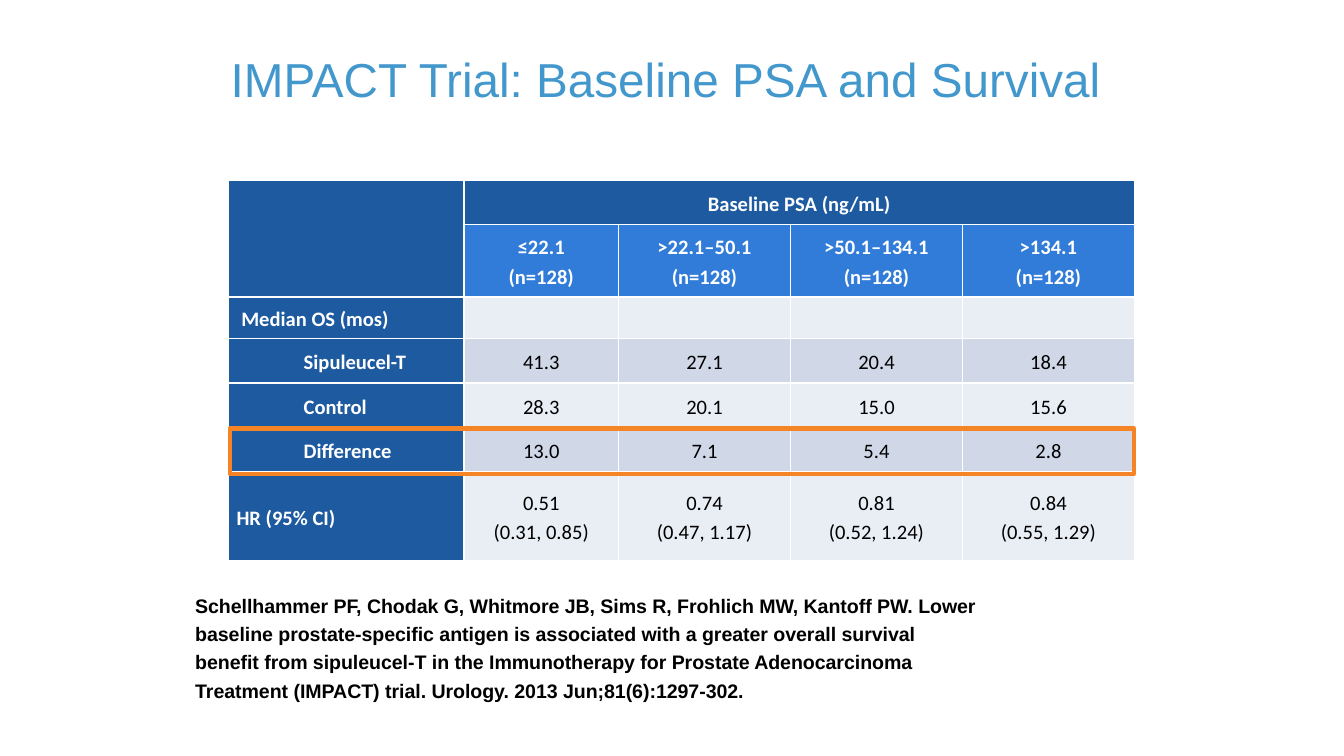
from lxml.etree import SubElement
from pptx import Presentation
from pptx.dml.color import RGBColor
from pptx.enum.shapes import MSO_SHAPE
from pptx.enum.text import MSO_ANCHOR, PP_ALIGN
from pptx.oxml.ns import qn
from pptx.util import Cm, Pt

WHITE = RGBColor(0xFF, 0xFF, 0xFF)
BLACK = RGBColor(0x00, 0x00, 0x00)
TITLE_BLUE = RGBColor(0x42, 0x98, 0xCC)
DARK_BLUE = RGBColor(0x1E, 0x5A, 0xA0)
MID_BLUE = RGBColor(0x30, 0x7C, 0xD8)
LIGHT_BAND = RGBColor(0xE9, 0xED, 0xF4)
DARK_BAND = RGBColor(0xD0, 0xD8, 0xE8)
ORANGE = RGBColor(0xF5, 0x84, 0x26)

COLUMN_WIDTHS = [4.45, 2.92, 3.25, 3.25, 3.25]
ROW_HEIGHTS = [0.84, 1.37, 0.79, 0.84, 0.84, 0.84, 1.68]
ROW_INDENTS = [0, 0, 0.09, 1.27, 1.27, 1.27, 0]
ROWS = [
    ["", "Baseline PSA (ng/mL)", "", "", ""],
    ["", "≤22.1\n(n=128)", ">22.1–50.1\n(n=128)", ">50.1–134.1\n(n=128)", ">134.1\n(n=128)"],
    ["Median OS (mos)", "", "", "", ""],
    ["Sipuleucel-T", "41.3", "27.1", "20.4", "18.4"],
    ["Control", "28.3", "20.1", "15.0", "15.6"],
    ["Difference", "13.0", "7.1", "5.4", "2.8"],
    ["HR (95% CI)", "0.51\n(0.31, 0.85)", "0.74\n(0.47, 1.17)", "0.81\n(0.52, 1.24)", "0.84\n(0.55, 1.29)"],
]
CITATION = [
    "Schellhammer PF, Chodak G, Whitmore JB, Sims R, Frohlich MW, Kantoff PW. Lower",
    "baseline prostate-specific antigen is associated with a greater overall survival",
    "benefit from sipuleucel-T in the Immunotherapy for Prostate Adenocarcinoma",
    "Treatment (IMPACT) trial. Urology. 2013 Jun;81(6):1297-302.",
]


class SlideBuilder:
    """Hold the fonts and the current slide, and draw each kind of element."""

    text_font = "Arial"
    table_font = "Calibri"

    def __init__(self, slide):
        self.slide = slide

    def add_run(self, paragraph, text, font_name, size, color, bold):
        run = paragraph.add_run()
        run.text = text
        run.font.name = font_name
        run.font.size = Pt(size)
        run.font.bold = bold
        run.font.color.rgb = color

    def add_text(self, lines, left, top, width, height, size, color,
                 bold=False, anchor=MSO_ANCHOR.TOP, space_before=0):
        shape = self.slide.shapes.add_textbox(Cm(left), Cm(top), Cm(width), Cm(height))
        frame = shape.text_frame
        frame.word_wrap = True
        frame.vertical_anchor = anchor
        for index, line in enumerate(lines):
            paragraph = frame.add_paragraph() if index else frame.paragraphs[0]
            if index:
                paragraph.space_before = Pt(space_before)
            self.add_run(paragraph, line, self.text_font, size, color, bold)
        return frame

    def add_borders(self, cell):
        properties = cell._tc.get_or_add_tcPr()
        for side in ("lnL", "lnR", "lnT", "lnB"):
            line = SubElement(properties, qn(f"a:{side}"), w=str(Pt(1)))
            fill = SubElement(line, qn("a:solidFill"))
            SubElement(fill, qn("a:srgbClr"), val=str(WHITE))

    def fill_cell(self, cell, text, row, column):
        header = row < 2 or column == 0
        self.add_borders(cell)
        cell.fill.solid()
        if row == 0 or column == 0:
            cell.fill.fore_color.rgb = DARK_BLUE
        elif row == 1:
            cell.fill.fore_color.rgb = MID_BLUE
        else:
            cell.fill.fore_color.rgb = DARK_BAND if row % 2 else LIGHT_BAND
        cell.vertical_anchor = MSO_ANCHOR.MIDDLE
        cell.margin_left = Cm(0.15 + (0 if column else ROW_INDENTS[row]))
        cell.margin_right = Cm(0.15)
        cell.margin_top = cell.margin_bottom = 0
        if not text:
            return
        for index, line in enumerate(text.split("\n")):
            frame = cell.text_frame
            paragraph = frame.add_paragraph() if index else frame.paragraphs[0]
            paragraph.alignment = PP_ALIGN.CENTER if column else PP_ALIGN.LEFT
            paragraph.line_spacing = 1.15
            self.add_run(paragraph, line, self.table_font, 11, WHITE if header else BLACK, header)

    def add_table(self, rows, left, top):
        table = self.slide.shapes.add_table(
            len(rows), len(COLUMN_WIDTHS), Cm(left), Cm(top),
            Cm(sum(COLUMN_WIDTHS)), Cm(sum(ROW_HEIGHTS))).table
        table.first_row = table.horz_banding = False
        for column, width in zip(table.columns, COLUMN_WIDTHS):
            column.width = Cm(width)
        for row, height in zip(table.rows, ROW_HEIGHTS):
            row.height = Cm(height)
        for row, texts in enumerate(rows):
            for column, text in enumerate(texts):
                self.fill_cell(table.cell(row, column), text, row, column)
        table.cell(0, 0).merge(table.cell(1, 0))
        table.cell(0, 1).merge(table.cell(0, 4))

    def add_highlight(self, left, top, width, height):
        shape = self.slide.shapes.add_shape(
            MSO_SHAPE.ROUNDED_RECTANGLE, Cm(left), Cm(top), Cm(width), Cm(height))
        shape.adjustments[0] = 0
        shape.shadow.inherit = False
        shape.fill.background()
        shape.line.color.rgb = ORANGE
        shape.line.width = Pt(2.25)


def main():
    presentation = Presentation()
    presentation.slide_width = Cm(25.4)
    presentation.slide_height = Cm(14.29)
    builder = SlideBuilder(presentation.slides.add_slide(presentation.slide_layouts[6]))
    title = builder.add_text(["IMPACT Trial: Baseline PSA and Survival"],
                             4.11, 0.66, 17.15, 1.78, 25.5, TITLE_BLUE, anchor=MSO_ANCHOR.MIDDLE)
    title.paragraphs[0].line_spacing = 0.9
    builder.add_table(ROWS, 4.32, 3.4)
    citation = builder.add_text(CITATION, 3.51, 11.13, 18.8, 2.26, 10.5, BLACK,
                                bold=True, space_before=2.5)
    citation.margin_left = citation.margin_right = Cm(0.18)
    citation.margin_top = citation.margin_bottom = Cm(0.1)
    builder.add_highlight(4.34, 8.1, 17.09, 0.86)
    presentation.save("out.pptx")


if __name__ == "__main__":
    main()
